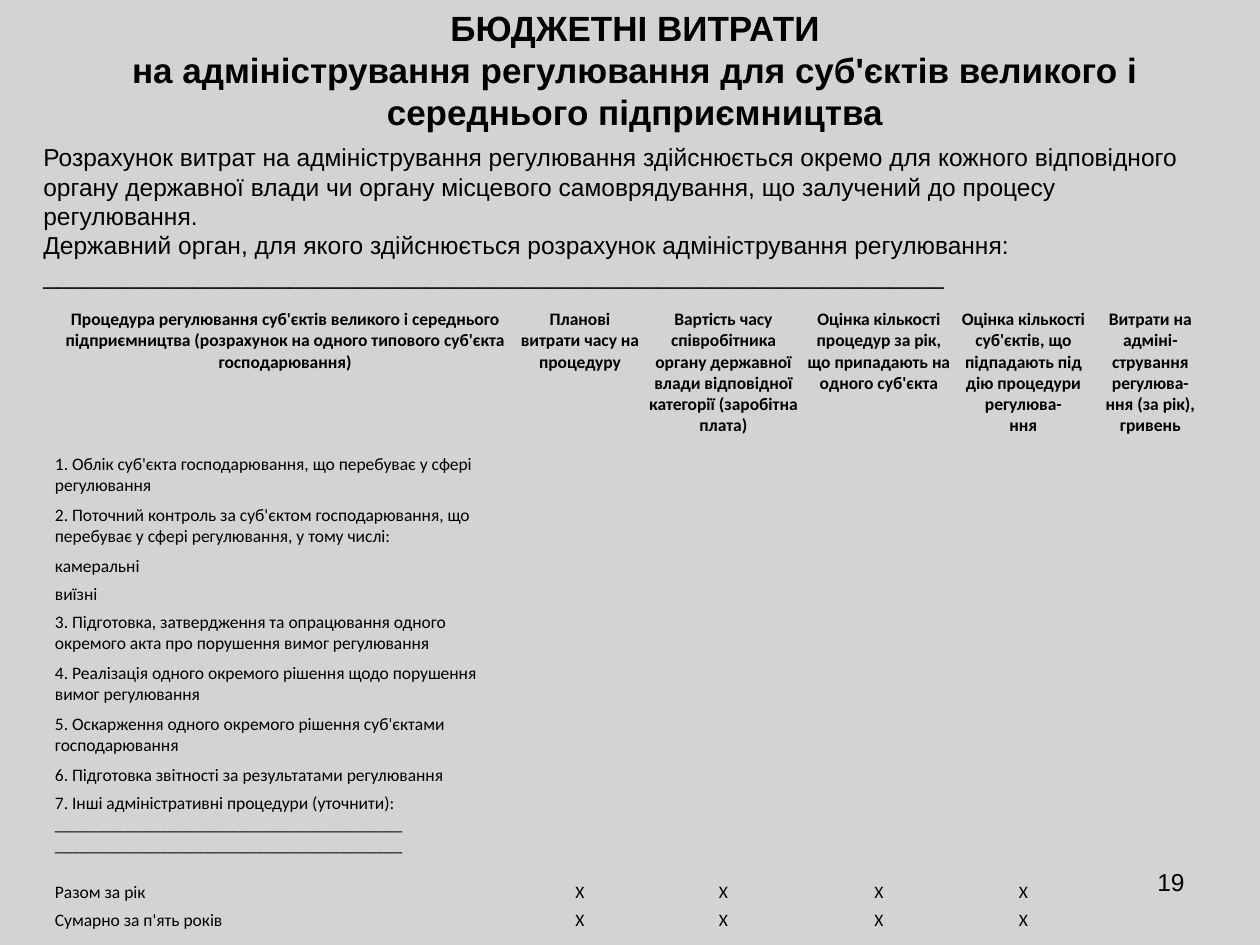
from typing import NamedTuple

from pptx import Presentation
from pptx.dml.color import RGBColor
from pptx.enum.text import PP_ALIGN
from pptx.util import Emu, Pt

PX = 914400 // 126
BLACK = RGBColor(0x00, 0x00, 0x00)
GRAY = RGBColor(0xD3, 0xD3, 0xD3)
NO_STYLE = "{2D5ABB26-0587-4C30-8999-92F81FD0307C}"
CELL_MARGIN = 2


class Style(NamedTuple):
    font: str
    size: int
    bold: bool = False
    align: PP_ALIGN = PP_ALIGN.LEFT


class TextBlock(NamedTuple):
    left: int
    top: int
    width: int
    height: int
    style: Style
    paragraphs: list[str]


class Row(NamedTuple):
    height: int
    label: str
    mark: str = ""


def px(length: int) -> Emu:
    return Emu(length * PX)


def write(para, text: str, style: Style) -> None:
    """Fill a paragraph run by run, with a line break at each newline."""
    para.alignment = style.align
    for index, line in enumerate(text.split("\n")):
        if index:
            para.add_line_break()
        span = para.add_run()
        span.text = line
        span.font.name = style.font
        span.font.size = Pt(style.size)
        span.font.bold = style.bold
        span.font.color.rgb = BLACK


def add_block(page, block: TextBlock) -> None:
    box = page.shapes.add_textbox(*map(px, block[:4]))
    frame = box.text_frame
    frame.word_wrap = True
    for index, text in enumerate(block.paragraphs):
        para = frame.add_paragraph() if index else frame.paragraphs[0]
        write(para, text, block.style)


def fill_cell(cell, text: str, style: Style) -> None:
    cell.fill.background()
    cell.margin_left = cell.margin_right = px(CELL_MARGIN)
    cell.margin_top = cell.margin_bottom = px(CELL_MARGIN)
    para = cell.text_frame.paragraphs[0]
    if text:
        write(para, text, style)
    else:  # keeps an empty cell from stretching its row
        para._p.get_or_add_endParaRPr().set("sz", str(style.size * 100))


# Text styles
TITLE = Style("Arial", 20, True, PP_ALIGN.CENTER)
BODY = Style("Arial", 14)
NUMBER = Style("Arial", 14, align=PP_ALIGN.RIGHT)
HEAD = Style("Calibri", 10, True, PP_ALIGN.CENTER)
LABEL = Style("Calibri", 10)
MARK = Style("Calibri", 10, align=PP_ALIGN.CENTER)

# Wording
BLOCKS = [
    TextBlock(903, 861, 294, 66, NUMBER, ["19"]),
    TextBlock(63, 0, 1144, 140, TITLE, [
        "БЮДЖЕТНІ ВИТРАТИ\nна адміністрування регулювання для суб'єктів "
        "великого і середнього підприємництва",
    ]),
    TextBlock(31, 136, 1187, 161, BODY, [
        "Розрахунок витрат на адміністрування регулювання здійснюється окремо "
        "для кожного відповідного органу державної влади чи органу місцевого "
        "самоврядування, що залучений до процесу регулювання.",
        "Державний орган, для якого здійснюється розрахунок адміністрування "
        "регулювання:\n" + "_" * 66,
    ]),
]
BLANK_LINE = "\n" + "_" * 40
COLUMNS = [
    (464, "Процедура регулювання суб'єктів великого і середнього підприємництва "
          "(розрахунок на одного типового суб'єкта господарювання)"),
    (126, "Планові витрати часу на процедуру"),
    (161, "Вартість часу співробітника органу державної влади відповідної "
          "категорії (заробітна плата)"),
    (150, "Оцінка кількості процедур за рік, що припадають на одного суб'єкта"),
    (139, "Оцінка кількості суб'єктів, що підпадають під дію процедури "
          "регулюва-\nння"),
    (115, "Витрати на адміні-\nстрування регулюва-\nння (за рік), гривень"),
]
HEAD_HEIGHT = 145
ROWS = [
    Row(51, "1. Облік суб'єкта господарювання, що перебуває у сфері регулювання"),
    Row(51, "2. Поточний контроль за суб'єктом господарювання, що перебуває у "
            "сфері регулювання, у тому числі:"),
    Row(28, "камеральні"),
    Row(28, "виїзні"),
    Row(51, "3. Підготовка, затвердження та опрацювання одного окремого акта про "
            "порушення вимог регулювання"),
    Row(51, "4. Реалізація одного окремого рішення щодо порушення вимог регулювання"),
    Row(51, "5. Оскарження одного окремого рішення суб'єктами господарювання"),
    Row(28, "6. Підготовка звітності за результатами регулювання"),
    Row(89, "7. Інші адміністративні процедури (уточнити):" + BLANK_LINE * 2),
    Row(28, "Разом за рік", "Х"),
    Row(28, "Сумарно за п'ять років", "Х"),
]


def add_cost_table(page) -> None:
    heights = [HEAD_HEIGHT] + [row.height for row in ROWS]
    width = sum(column_width for column_width, _ in COLUMNS)
    shape = page.shapes.add_table(len(heights), len(COLUMNS), px(53), px(307),
                                  px(width), px(sum(heights)))
    table = shape.table
    table.horz_banding = False
    table.first_row = False
    table._tbl.tblPr.find("{*}tableStyleId").text = NO_STYLE
    for table_row, height in zip(table.rows, heights):
        table_row.height = px(height)

    # Header row
    for index, (column_width, heading) in enumerate(COLUMNS):
        table.columns[index].width = px(column_width)
        fill_cell(table.cell(0, index), heading, HEAD)

    # Procedures and totals; the last column stays open
    for index, row in enumerate(ROWS, start=1):
        texts = [row.label] + [row.mark] * (len(COLUMNS) - 2) + [""]
        for column, text in enumerate(texts):
            fill_cell(table.cell(index, column), text, MARK if column else LABEL)


def main() -> None:
    deck = Presentation()
    deck.slide_width, deck.slide_height = px(1260), px(945)
    page = deck.slides.add_slide(deck.slide_layouts[6])
    page.background.fill.solid()
    page.background.fill.fore_color.rgb = GRAY
    for block in BLOCKS:
        add_block(page, block)
    add_cost_table(page)
    deck.save("out.pptx")


if __name__ == "__main__":
    main()
